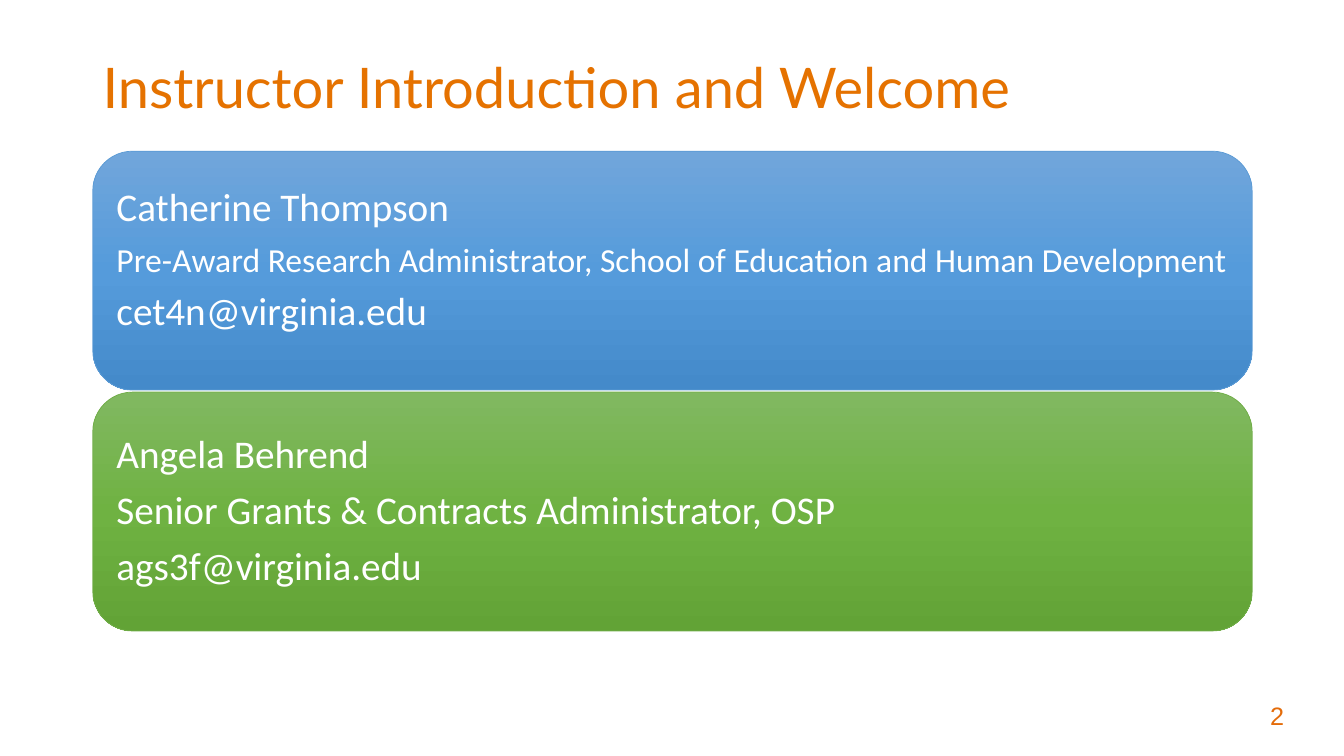
from copy import deepcopy

from pptx import Presentation
from pptx.dml.color import RGBColor
from pptx.enum import shapes, text
from pptx.oxml import ns
from pptx.util import Inches, Pt

ORANGE, PAGE_ORANGE, WHITE = "E57200", "E46C0A", "FFFFFF"
CARD_LEFT, CARD_WIDTH, CARD_HEIGHT = 0.92, 11.5, 2.37
FIRST_CARD_TOP, CARD_PITCH = 1.5, 2.39
SPACE_AFTER_RATIO = 0.35

# Each line: wording, size, line spacing
INSTRUCTORS = [
    {
        "stops": ["71A6DB", "559BDB", "448ACA"],
        "outline": "5B9BD5",
        "bottom_inset": 0.6,
        "lines": [
            ("Catherine Thompson", 28, 1.5),
            ("Pre-Award Research Administrator, School of Education and Human Development", 24, 0.9),
            ("cet4n@virginia.edu", 28, 0.9),
        ],
    },
    {
        "stops": ["81B861", "6FB242", "62A336"],
        "outline": "70AD47",
        "bottom_inset": 0.12,
        "lines": [
            ("Angela Behrend", 28, 0.9),
            ("Senior Grants & Contracts Administrator, OSP", 28, 0.9),
            ("ags3f@virginia.edu", 28, 0.9),
        ],
    },
]


def color(hex_value):
    return RGBColor.from_string(hex_value)


def set_attributes(target, values):
    for name, value in values.items():
        setattr(target, name, value)


def write_paragraph(paragraph, wording, size, font_name, hex_value, **layout):
    paragraph.text = wording
    set_attributes(paragraph, layout)
    set_attributes(paragraph.font, {"size": Pt(size), "name": font_name})
    paragraph.font.color.rgb = color(hex_value)


def add_label(slide, box, wording, size, font_name, hex_value, frame_format, **layout):
    label = slide.shapes.add_textbox(*map(Inches, box))
    set_attributes(label.text_frame, frame_format)
    write_paragraph(label.text_frame.paragraphs[0], wording, size, font_name, hex_value, **layout)


def fill_gradient(shape, stops):
    """Fill from top to bottom with evenly spaced colours."""
    shape.fill.gradient()
    shape.fill.gradient_angle = 270
    stop_list = shape._element.spPr.find(".//" + ns.qn("a:gsLst"))
    while len(stop_list) < len(stops):
        stop_list.append(deepcopy(stop_list[-1]))
    for index, (stop, hex_value) in enumerate(zip(shape.fill.gradient_stops, stops)):
        stop.color.rgb = color(hex_value)
        stop.position = index / (len(stops) - 1)


def add_instructor_card(slide, top, instructor):
    box = (CARD_LEFT, top, CARD_WIDTH, CARD_HEIGHT)
    card = slide.shapes.add_shape(shapes.MSO_SHAPE.ROUNDED_RECTANGLE, *map(Inches, box))
    card.shadow.inherit = False
    fill_gradient(card, instructor["stops"])
    card.line.color.rgb = color(instructor["outline"])
    card.line.width = Pt(0.5)
    frame = card.text_frame
    set_attributes(frame, {
        "word_wrap": True,
        "vertical_anchor": text.MSO_ANCHOR.MIDDLE,
        "margin_left": Inches(0.12),
        "margin_right": Inches(0.12),
        "margin_top": Inches(0.12),
        "margin_bottom": Inches(instructor["bottom_inset"]),
    })
    for index, (wording, size, spacing) in enumerate(instructor["lines"]):
        paragraph = frame.add_paragraph() if index else frame.paragraphs[0]
        write_paragraph(paragraph, wording, size, "Calibri", WHITE,
                        alignment=text.PP_ALIGN.LEFT, line_spacing=spacing,
                        space_after=Pt(size * SPACE_AFTER_RATIO))


def main():
    presentation = Presentation()
    presentation.slide_width = Inches(13.33)
    presentation.slide_height = Inches(7.5)
    slide = presentation.slides.add_slide(presentation.slide_layouts[6])

    add_label(slide, (12.5, 6.9, 0.51, 0.4), "2", 18, "Arial", PAGE_ORANGE,
              {"word_wrap": False, "auto_size": text.MSO_AUTO_SIZE.SHAPE_TO_FIT_TEXT})
    add_label(slide, (CARD_LEFT, 0.4, CARD_WIDTH, 1), "Instructor Introduction and Welcome",
              40, "Lato", ORANGE,
              {"word_wrap": True, "vertical_anchor": text.MSO_ANCHOR.MIDDLE},
              line_spacing=0.9)
    for index, instructor in enumerate(INSTRUCTORS):
        add_instructor_card(slide, FIRST_CARD_TOP + index * CARD_PITCH, instructor)

    presentation.save("out.pptx")


if __name__ == "__main__":
    main()
